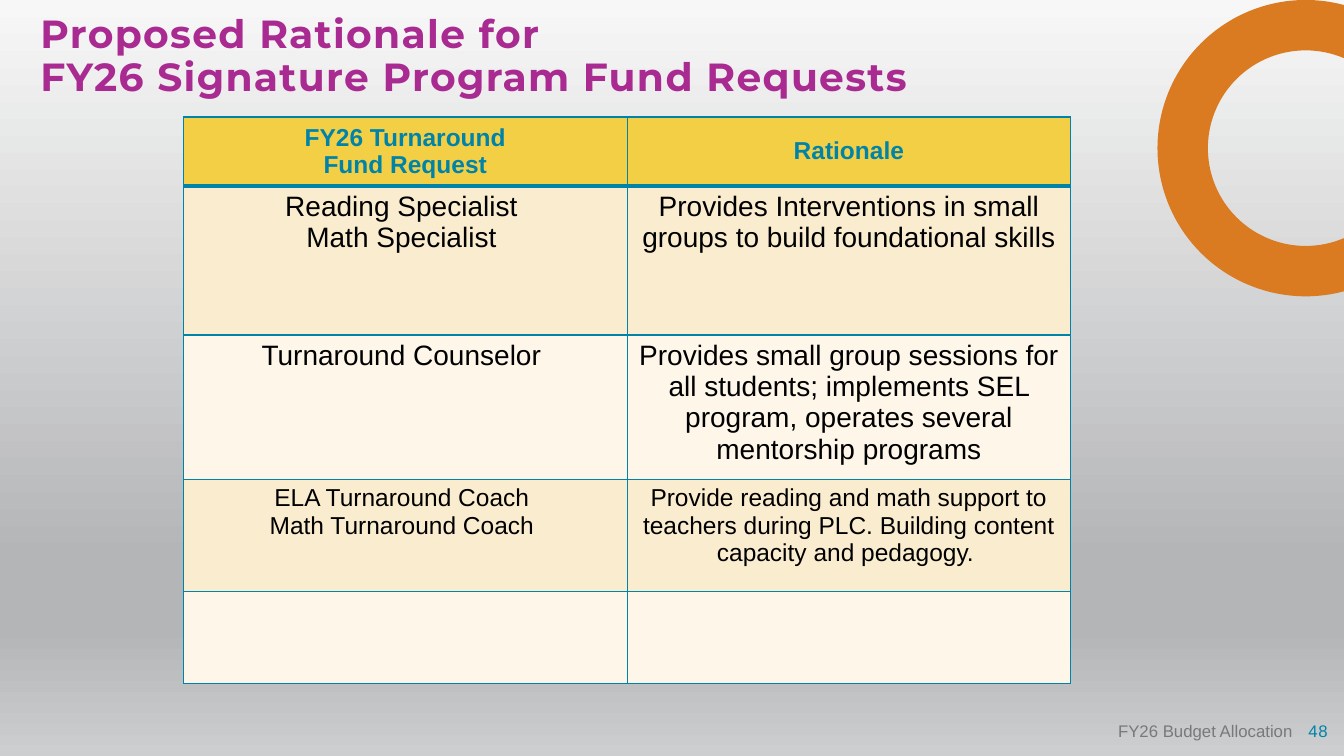
"""Build the FY26 signature program fund request slide."""
import math

from lxml import etree
from pptx import Presentation
from pptx import util as u
from pptx.dml.color import RGBColor
from pptx.enum import text
from pptx.oxml import ns

TITLE = "Proposed Rationale for \vFY26 Signature Program Fund Requests"
FOOTER = "FY26 Budget Allocation"
PAGE_NUMBER = "48"
ROWS = [
    (0.65, 17.5, "FY26 Turnaround\nFund Request", "Rationale"),
    (1.48, 20, "Reading Specialist \nMath Specialist ",
     "Provides Interventions in small groups to build foundational skills"),
    (1.24, 20, "Turnaround Counselor ",
     "Provides small group sessions for all students; implements SEL program, "
     "operates several mentorship programs"),
    (1.11, 17.5, "ELA Turnaround Coach \nMath Turnaround Coach ",
     "Provide reading and math support to teachers during PLC. "
     "Building content capacity and pedagogy. "),
    (0.91, 17.5, "", ""),
]
BACKGROUND_STOPS = [(0, "F7F7F7"), (74, "B4B5B7"), (83, "B4B5B7"), (100, "CDCECF")]
WIDTH, HEIGHT = 13.33, 7.5
COLUMN_WIDTH = 4.4
RING_X, RING_Y, OUTER, INNER = 12.95, 1.47, 1.47, 0.97

ORANGE = RGBColor(0xDA, 0x7B, 0x22)
MAGENTA = RGBColor(0xA9, 0x2A, 0x91)
TEAL = RGBColor(0x00, 0x83, 0xA9)
GREY = RGBColor(0x79, 0x79, 0x79)
BLACK = RGBColor(0, 0, 0)
GOLD = RGBColor(0xF3, 0xCF, 0x45)
SAND = RGBColor(0xFA, 0xED, 0xCF)
CREAM = RGBColor(0xFD, 0xF6, 0xE9)


def paint_background(page):
    fill = page.background.fill
    fill.gradient()
    fill.gradient_angle = 270
    stops = page.background._cSld.find(".//" + ns.qn("a:gsLst"))
    for stop in list(stops):
        stops.remove(stop)
    for percent, color in BACKGROUND_STOPS:
        stop = etree.SubElement(stops, ns.qn("a:gs"), pos=str(percent * 1000))
        etree.SubElement(stop, ns.qn("a:srgbClr"), val=color)


def arc_points(radius):
    start = math.acos((WIDTH - RING_X) / radius)
    angles = (start, math.pi / 2, math.pi, 3 * math.pi / 2, 2 * math.pi - start)
    return [(u.Inches(RING_X + radius * math.cos(angle)),
             u.Inches(RING_Y + radius * math.sin(angle))) for angle in angles]


def arc_element(radius, direction):
    start = math.degrees(math.acos((WIDTH - RING_X) / radius))
    first = start if direction > 0 else 360 - start
    sweep = direction * (360 - 2 * start)
    size = str(u.Inches(radius))
    return etree.Element(ns.qn("a:arcTo"), wR=size, hR=size,
                         stAng=str(round(first * 60000)),
                         swAng=str(round(sweep * 60000)))


def add_ring(page):
    points = arc_points(OUTER) + arc_points(INNER)[::-1]
    builder = page.shapes.build_freeform(*points[0])
    builder.add_line_segments(points[1:], close=True)
    ring = builder.convert_to_shape()
    segments = ring._element.findall(".//" + ns.qn("a:lnTo"))
    outline = segments[0].getparent()
    outline.replace(segments[0], arc_element(OUTER, 1))
    outline.replace(segments[5], arc_element(INNER, -1))
    for segment in segments[1:4] + segments[6:]:
        outline.remove(segment)
    ring.shadow.inherit = False
    ring.fill.solid()
    ring.fill.fore_color.rgb = ORANGE
    ring.line.fill.background()


def style(para, size, color, bold=False, font="Arial", spacing=0):
    for span in para.runs:
        span.font.name = font
        span.font.size = u.Pt(size)
        span.font.bold = bold
        span.font.color.rgb = color
        if spacing:
            span.font._element.set("spc", str(int(spacing * 100)))


def add_text(page, place, content, anchor, align, side_inset=0):
    box = page.shapes.add_textbox(*map(u.Inches, place))
    frame = box.text_frame
    frame.word_wrap = True
    frame.vertical_anchor = anchor
    frame.margin_left = frame.margin_right = u.Inches(side_inset)
    frame.margin_top = frame.margin_bottom = 0
    frame.text = content
    para = frame.paragraphs[0]
    para.alignment = align
    return para


def border(side, points):
    line = etree.Element(ns.qn("a:" + side), w=str(u.Pt(points)))
    fill = etree.SubElement(line, ns.qn("a:solidFill"))
    etree.SubElement(fill, ns.qn("a:srgbClr"), val=str(TEAL))
    return line


def fill_cell(cell, row, size, content):
    header = row == 0
    cell.fill.solid()
    cell.fill.fore_color.rgb = GOLD if header else SAND if row % 2 else CREAM
    cell.vertical_anchor = text.MSO_ANCHOR.MIDDLE if header else text.MSO_ANCHOR.TOP
    if content:
        cell.text = content
    for para in cell.text_frame.paragraphs:
        para.alignment = text.PP_ALIGN.CENTER
        style(para, size, TEAL if header else BLACK, bold=header)
    weights = {"lnL": 1, "lnR": 1, "lnT": 3 if row == 1 else 1, "lnB": 3 if header else 1}
    properties = cell._tc.get_or_add_tcPr()
    for index, (side, points) in enumerate(weights.items()):
        properties.insert(index, border(side, points))


def add_requests(page):
    total = sum(row[0] for row in ROWS)
    frame = page.shapes.add_table(len(ROWS), 2, u.Inches(1.82), u.Inches(1.16),
                                  u.Inches(2 * COLUMN_WIDTH), u.Inches(total))
    table = frame.table
    for column in table.columns:
        column.width = u.Inches(COLUMN_WIDTH)
    for index, (height, size, *contents) in enumerate(ROWS):
        table.rows[index].height = u.Inches(height)
        for column, content in enumerate(contents):
            fill_cell(table.cell(index, column), index, size, content)


def main():
    deck = Presentation()
    deck.slide_width, deck.slide_height = u.Inches(WIDTH), u.Inches(HEIGHT)
    page = deck.slides.add_slide(deck.slide_layouts[6])
    paint_background(page)
    add_ring(page)
    title = add_text(page, (0.4, 0.15, 11.31, 1.03), TITLE,
                     text.MSO_ANCHOR.TOP, text.PP_ALIGN.LEFT)
    title.line_spacing = 0.9
    style(title, 28, MAGENTA, bold=True, font="Montserrat", spacing=1)
    add_requests(page)
    number = add_text(page, (10.17, 7.05, 3, 0.4), PAGE_NUMBER,
                      text.MSO_ANCHOR.MIDDLE, text.PP_ALIGN.RIGHT)
    style(number, 12, TEAL, spacing=0.5)
    footer = add_text(page, (10.79, 7.05, 2.13, 0.4), FOOTER,
                      text.MSO_ANCHOR.MIDDLE, text.PP_ALIGN.RIGHT, side_inset=0.1)
    style(footer, 12, GREY)
    deck.save("out.pptx")


if __name__ == "__main__":
    main()
